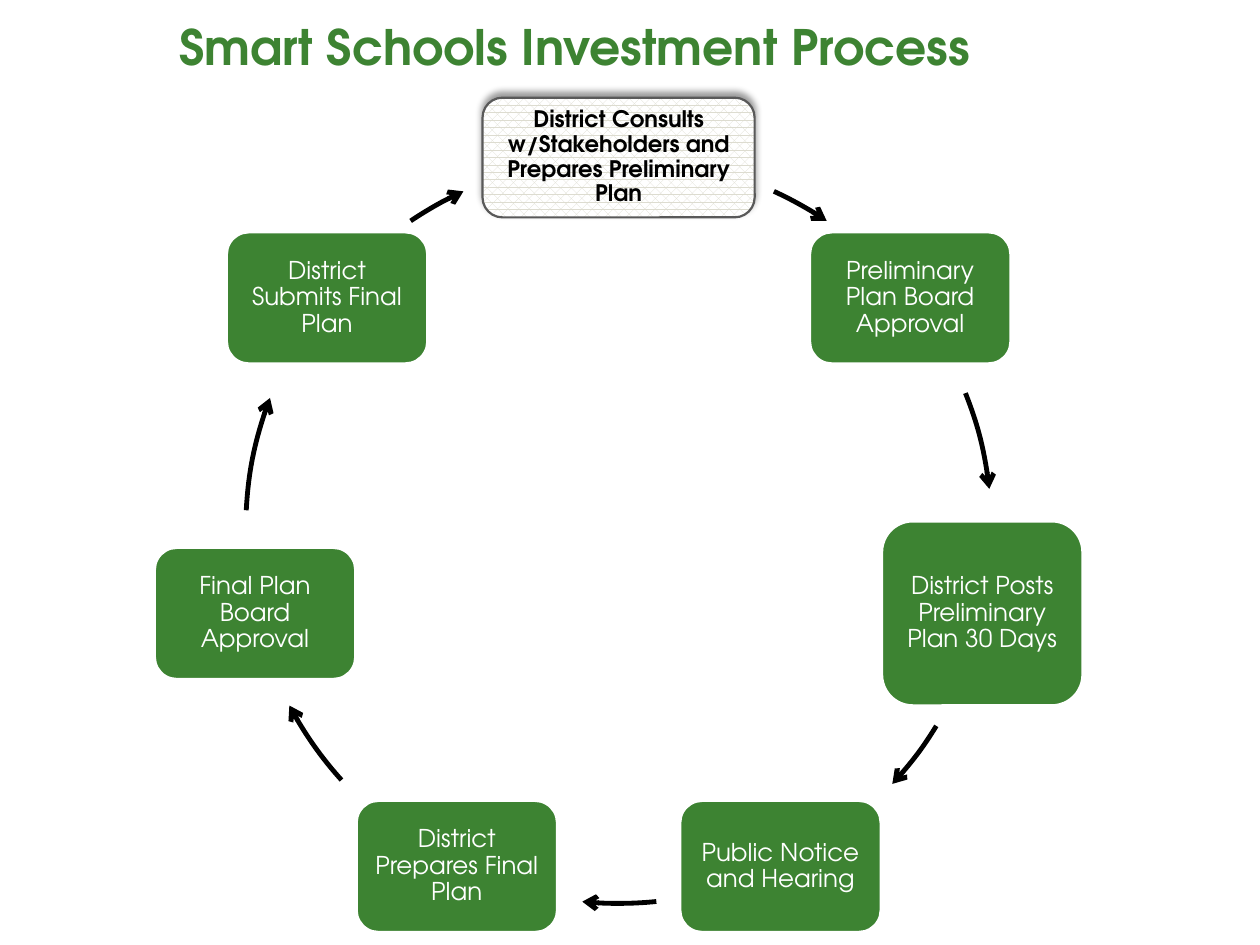
from dataclasses import dataclass
from math import cos, radians, sin

from lxml.etree import SubElement
from pptx import Presentation
from pptx.dml.color import RGBColor
from pptx.enum.dml import MSO_PATTERN
from pptx.enum.shapes import MSO_SHAPE
from pptx.enum.text import MSO_ANCHOR, MSO_AUTO_SIZE, PP_ALIGN
from pptx.oxml.ns import qn
from pptx.util import Inches, Pt


@dataclass(frozen=True)
class Theme:
    font: str = "TeX Gyre Adventor"
    green: str = "3D8332"
    white: str = "FFFFFF"
    black: str = "000000"
    border: str = "595959"
    hatch: str = "DDDCD0"
    title_size: float = 27.9
    start_size: float = 13
    step_size: float = 14
    box_line: float = 1.25
    arrow_line: float = 2.75


@dataclass(frozen=True)
class Step:
    text: str
    arc: tuple[float, float]  # arrow to the next step, degrees clockwise from east
    width: float = 1.59
    height: float = 1.04
    is_start: bool = False


THEME = Theme()
CENTER_X, CENTER_Y, RADIUS = 4.91, 4.21, 2.96

STEPS = [
    Step("District Consults w/Stakeholders and Prepares Preliminary Plan",
         (294.6, 303.9), 2.16, 0.95, True),
    Step("Preliminary Plan Board Approval", (338.4, 353.6)),
    Step("District Posts Preliminary Plan 30 Days", (31.6, 42.8), height=1.46),
    Step("Public Notice and Hearing", (84.2, 95.6)),
    Step("District Prepares Final Plan", (138, 152)),
    Step("Final Plan Board Approval", (183.1, 200.8)),
    Step("District Submits Final Plan", (236.1, 245.4)),
]


def rgb(color: str) -> RGBColor:
    return RGBColor.from_string(color)


def write(tf, text: str, *, size: float, color: str, bold: bool = False,
          spacing: float = 1.0, anchor=MSO_ANCHOR.MIDDLE) -> None:
    tf.word_wrap = True
    tf.auto_size = MSO_AUTO_SIZE.NONE
    tf.vertical_anchor = anchor
    p = tf.paragraphs[0]
    p.alignment = PP_ALIGN.CENTER
    p.line_spacing = spacing
    r = p.add_run()
    r.text = text
    r.font.name = THEME.font
    r.font.size = Pt(size)
    r.font.bold = bold
    r.font.color.rgb = rgb(color)


def add_glow(sp) -> None:
    """Soft shadow cast upwards."""
    effects = sp._element.spPr.find(qn("a:effectLst"))
    shadow = SubElement(effects, qn("a:outerShdw"), blurRad=str(Pt(4)),
                        dist=str(Pt(3)), dir="16200000", rotWithShape="0")
    color = SubElement(shadow, qn("a:srgbClr"), val=THEME.black)
    SubElement(color, qn("a:alpha"), val="40000")


def add_step(s, step: Step, angle: float) -> None:
    x = CENTER_X + RADIUS * cos(radians(angle))
    y = CENTER_Y + RADIUS * sin(radians(angle))
    sp = s.shapes.add_shape(
        MSO_SHAPE.ROUNDED_RECTANGLE,
        Inches(x - step.width / 2), Inches(y - step.height / 2),
        Inches(step.width), Inches(step.height))
    sp.shadow.inherit = False
    sp.line.width = Pt(THEME.box_line)
    if step.is_start:
        sp.fill.patterned()
        sp.fill.pattern = MSO_PATTERN.PERCENT_60
        sp.fill.fore_color.rgb = rgb(THEME.hatch)
        sp.fill.back_color.rgb = rgb(THEME.white)
        sp.line.color.rgb = rgb(THEME.border)
        add_glow(sp)
    else:
        sp.fill.solid()
        sp.fill.fore_color.rgb = rgb(THEME.green)
        sp.line.color.rgb = rgb(THEME.white)
    tf = sp.text_frame
    inset = Inches(0.05 if step.is_start else 0.06)
    tf.margin_left = tf.margin_right = tf.margin_top = tf.margin_bottom = inset
    write(tf, step.text, spacing=0.9, bold=step.is_start,
          size=THEME.start_size if step.is_start else THEME.step_size,
          color=THEME.black if step.is_start else THEME.white)


def add_arrow(s, arc: tuple[float, float]) -> None:
    sp = s.shapes.add_shape(
        MSO_SHAPE.ARC, Inches(CENTER_X - RADIUS), Inches(CENTER_Y - RADIUS),
        Inches(2 * RADIUS), Inches(2 * RADIUS))
    for i, angle in enumerate(arc):
        # Stored in 60000ths of a degree; adjustments count in 100000ths
        sp.adjustments[i] = angle * 0.6
    sp.shadow.inherit = False
    sp.fill.background()
    sp.line.color.rgb = rgb(THEME.black)
    sp.line.width = Pt(THEME.arrow_line)
    SubElement(sp.line._get_or_add_ln(), qn("a:tailEnd"), type="arrow")


def add_title(s, text: str) -> None:
    title = s.shapes.title
    title.left, title.top = Inches(1.08), Inches(-0.03)
    title.width, title.height = Inches(7.68), Inches(0.71)
    # A wide right margin sets the heading left of centre
    title.text_frame.margin_right = Inches(0.82)
    title.text_frame.margin_bottom = Inches(0.08)
    write(title.text_frame, text, size=THEME.title_size, color=THEME.green,
          bold=True, anchor=MSO_ANCHOR.BOTTOM)


def main() -> None:
    prs = Presentation()
    prs.slide_width, prs.slide_height = Inches(10), Inches(7.5)
    s = prs.slides.add_slide(prs.slide_layouts[5])
    add_title(s, "Smart Schools Investment Process")

    # Steps sit evenly round the circle, clockwise from the top
    for i, step in enumerate(STEPS):
        add_step(s, step, -90 + i * 360 / len(STEPS))
        add_arrow(s, step.arc)

    prs.save("out.pptx")


if __name__ == "__main__":
    main()
